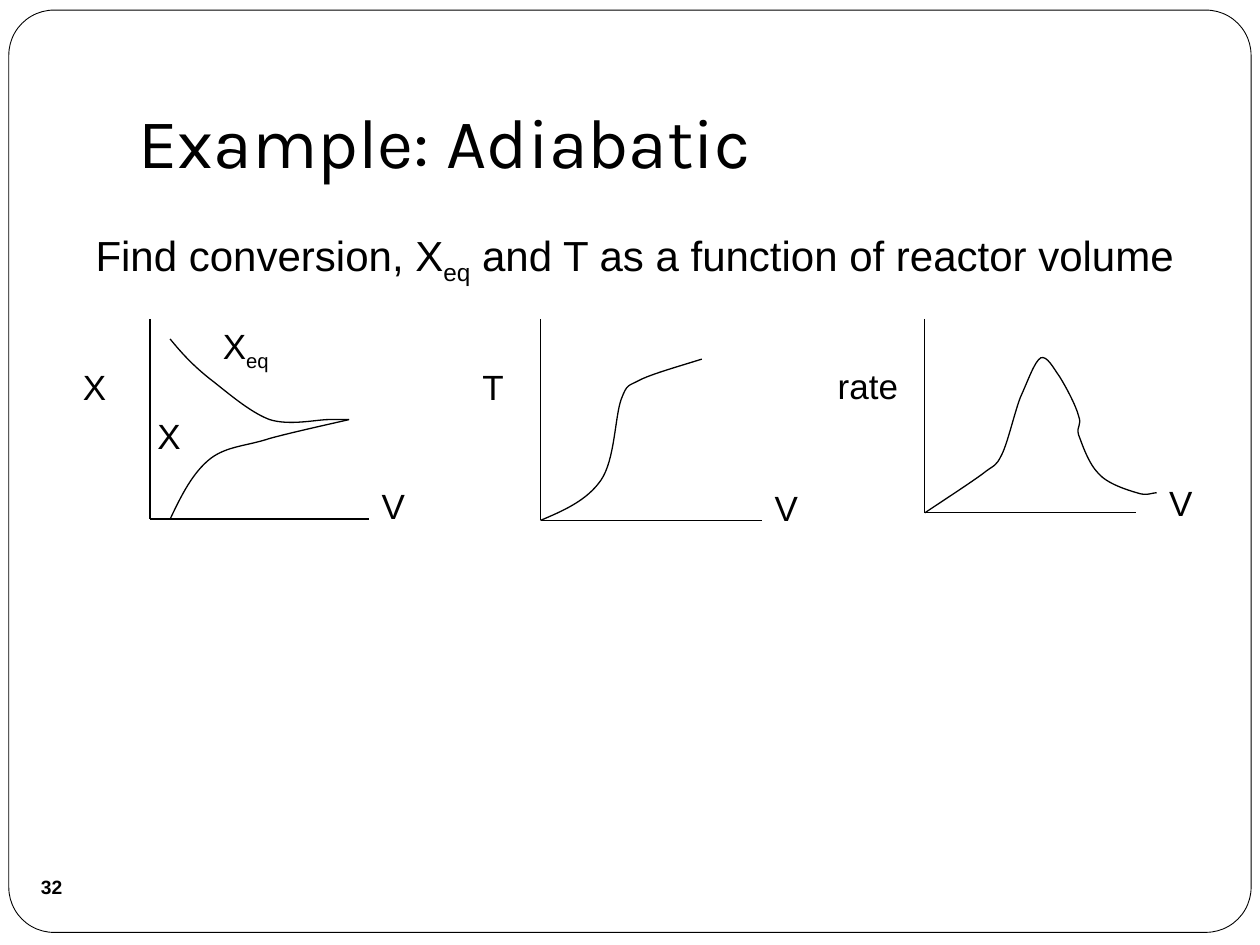
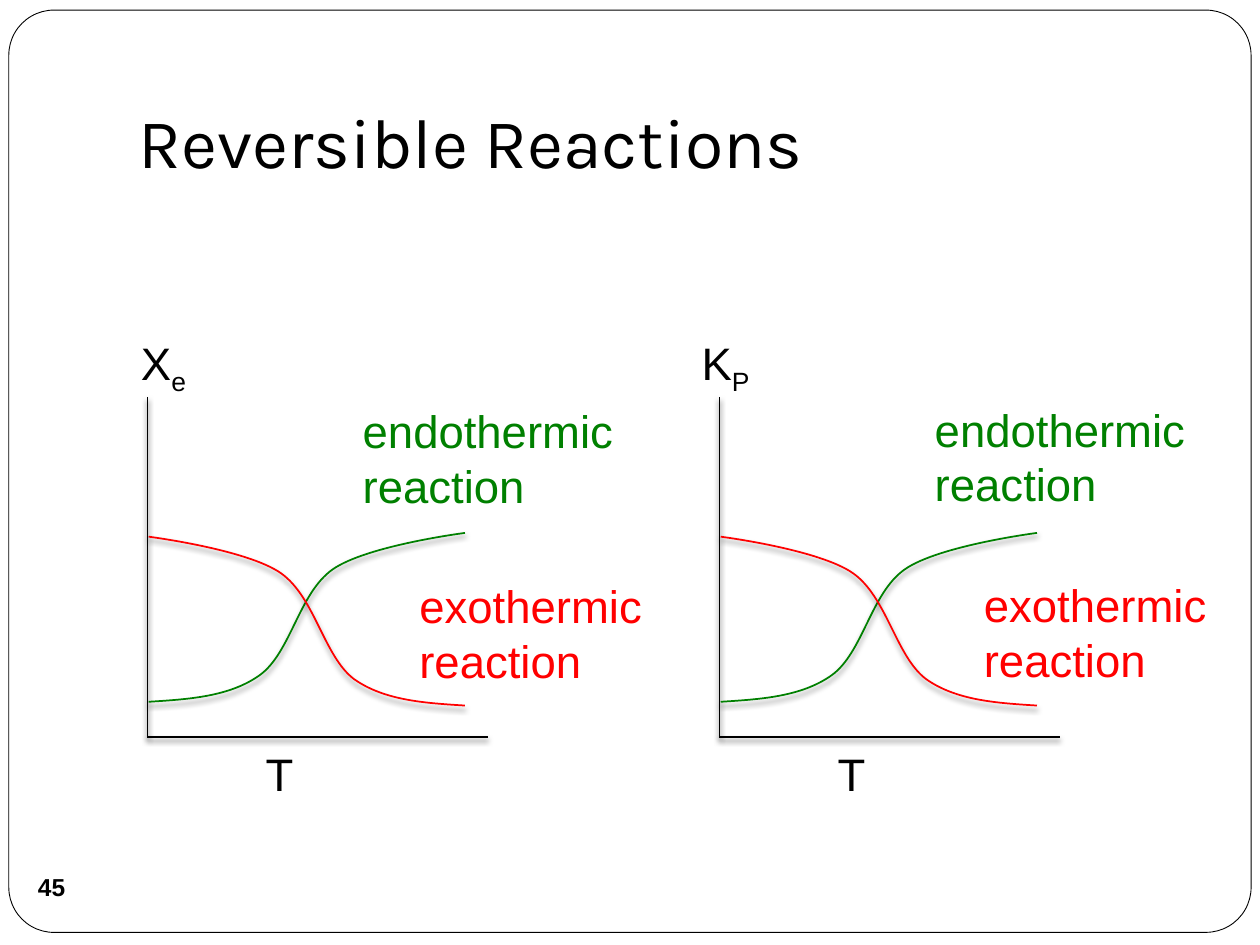
from dataclasses import dataclass

from lxml.etree import SubElement
from pptx import Presentation
from pptx.dml.color import RGBColor
from pptx.enum.shapes import MSO_CONNECTOR, MSO_SHAPE
from pptx.enum.text import MSO_ANCHOR, PP_ALIGN
from pptx.oxml.ns import qn
from pptx.util import Inches, Pt

BLACK = RGBColor(0x00, 0x00, 0x00)
WHITE = RGBColor(0xFF, 0xFF, 0xFF)
GREEN = RGBColor(0x00, 0x80, 0x00)
RED = RGBColor(0xFF, 0x00, 0x00)

BODY_FONT = "Arial"
TITLE_FONT = "Karla"

Point = tuple[float, float]


@dataclass(frozen=True)
class Label:
    text: str  # parts between underscores are subscripts
    left: float
    top: float
    width: float
    height: float
    color: RGBColor = BLACK


@dataclass(frozen=True)
class Curve:
    """A start point followed by three points for each cubic segment."""
    points: tuple[Point, ...]
    color: RGBColor = BLACK


@dataclass(frozen=True)
class Graph:
    left: float
    top: float
    right: float
    bottom: float
    labels: tuple[Label, ...]
    curves: tuple[Curve, ...]
    curve_offset: float = 0


# Adiabatic profiles along the reactor volume
PROFILE_GRAPHS = (
    Graph(1.19, 2.53, 2.93, 4.12, (
        Label("V", 2.93, 3.8, 0.79, 0.44),
        Label("X", 0.56, 2.85, 0.79, 0.44),
        Label("X", 1.15, 3.24, 0.79, 0.44),
        Label("X_eq_", 1.67, 2.53, 1.27, 0.44),
    ), (
        Curve(((1.35, 4.12), (1.44, 3.93), (1.53, 3.75), (1.67, 3.64),
               (1.8, 3.54), (1.96, 3.54), (2.14, 3.48),
               (2.32, 3.43), (2.69, 3.35), (2.77, 3.33))),
        Curve(((1.35, 2.69), (1.44, 2.8), (1.53, 2.9), (1.67, 3.01),
               (1.8, 3.11), (1.98, 3.27), (2.14, 3.33),
               (2.3, 3.38), (2.51, 3.33), (2.61, 3.33),
               (2.72, 3.33), (2.75, 3.33), (2.77, 3.33))),
    )),
    Graph(4.29, 2.53, 6.05, 4.13, (
        Label("V", 6.05, 3.81, 0.8, 0.44),
        Label("T", 3.73, 2.85, 0.8, 0.44),
    ), (
        Curve(((4.29, 4.13), (4.48, 4.05), (4.66, 3.97), (4.77, 3.81),
               (4.88, 3.65), (4.88, 3.31), (4.93, 3.17),
               (4.98, 3.04), (4.98, 3.07), (5.09, 3.01),
               (5.2, 2.96), (5.38, 2.91), (5.57, 2.85))),
    )),
    Graph(7.34, 2.53, 9.02, 4.07, (
        Label("V", 9.18, 3.77, 0.77, 0.44),
        Label("rate", 6.55, 2.84, 1.23, 0.44),
    ), (
        Curve(((7.34, 4.07), (7.52, 3.95), (7.69, 3.84), (7.8, 3.76),
               (7.9, 3.68), (7.9, 3.71), (7.95, 3.61),
               (8, 3.51), (8.05, 3.28), (8.1, 3.15),
               (8.16, 3.02), (8.21, 2.87), (8.26, 2.84),
               (8.31, 2.82), (8.36, 2.92), (8.41, 2.99),
               (8.46, 3.07), (8.54, 3.22), (8.56, 3.3),
               (8.59, 3.38), (8.54, 3.38), (8.56, 3.45),
               (8.59, 3.53), (8.64, 3.68), (8.72, 3.76),
               (8.79, 3.84), (8.95, 3.89), (9.02, 3.91),
               (9.1, 3.94), (9.15, 3.91), (9.18, 3.91))),
    )),
)

# Equilibrium curves, measured from the vertical axis of their graph
ENDOTHERMIC = Curve((
    (0, 5.57), (0.32, 5.55), (0.64, 5.53), (0.88, 5.36),
    (1.13, 5.18), (1.19, 4.71), (1.46, 4.52),
    (1.73, 4.33), (2.51, 4.23), (2.51, 4.23)), GREEN)
EXOTHERMIC = Curve((
    (2.51, 5.6), (2.19, 5.58), (1.87, 5.56), (1.63, 5.39),
    (1.39, 5.21), (1.32, 4.74), (1.05, 4.55),
    (0.78, 4.36), (0, 4.26), (0, 4.26)), RED)


def equilibrium_graph(left: float, quantity: Label, endothermic: Label,
                      exothermic: Label) -> Graph:
    temperature = Label("T", left + 0.84, 5.87, 0.77, 0.54)
    return Graph(left, 3.15, left + 2.7, 5.85,
                 (quantity, endothermic, exothermic, temperature),
                 (ENDOTHERMIC, EXOTHERMIC), curve_offset=left + 0.01)


EQUILIBRIUM_GRAPHS = (
    equilibrium_graph(
        1.17, Label("X_e_", 1.02, 2.61, 0.77, 0.54),
        Label("endothermic reaction", 2.78, 3.15, 2.92, 0.98, GREEN),
        Label("exothermic reaction", 3.23, 4.54, 2.47, 0.98, RED)),
    equilibrium_graph(
        5.71, Label("K_P_", 5.47, 2.61, 0.77, 0.54),
        Label("endothermic reaction", 7.32, 3.14, 2.92, 0.98, GREEN),
        Label("exothermic reaction", 7.71, 4.53, 2.31, 0.98, RED)),
)


def write_text(frame, text: str, *, size: float, color: RGBColor = BLACK,
               font: str = BODY_FONT, bold: bool = False,
               align: PP_ALIGN = PP_ALIGN.LEFT,
               anchor: MSO_ANCHOR = MSO_ANCHOR.TOP,
               margins: tuple[float, ...] = (0.1, 0.05, 0.1, 0.05),
               wrap: bool = True) -> None:
    frame.word_wrap = wrap
    frame.vertical_anchor = anchor
    (frame.margin_left, frame.margin_top,
     frame.margin_right, frame.margin_bottom) = map(Inches, margins)
    paragraph = frame.paragraphs[0]
    paragraph.alignment = align
    for index, part in enumerate(text.split("_")):
        if not part:
            continue
        run = paragraph.add_run()
        run.text = part
        run.font.name = font
        run.font.size = Pt(size)
        run.font.bold = bold
        run.font.color.rgb = color
        if index % 2:
            run.font._element.set("baseline", "-25000")


def add_label(slide, label: Label, size: float) -> None:
    box = slide.shapes.add_textbox(Inches(label.left), Inches(label.top),
                                   Inches(label.width), Inches(label.height))
    write_text(box.text_frame, label.text, size=size, color=label.color)


def style_stroke(stroke, color: RGBColor, width: float, shadow: bool) -> None:
    stroke.line.color.rgb = color
    stroke.line.width = Pt(width)
    effects = SubElement(stroke._element.spPr, qn("a:effectLst"))
    if shadow:
        outer = SubElement(effects, qn("a:outerShdw"), blurRad=str(Pt(3)),
                           dist=str(Pt(2)), dir="5400000", rotWithShape="0")
        shade = SubElement(outer, qn("a:srgbClr"), val=str(BLACK))
        SubElement(shade, qn("a:alpha"), val="50000")


def add_curve(slide, curve: Curve, offset: float):
    start, *rest = [(Inches(x + offset), Inches(y)) for x, y in curve.points]
    builder = slide.shapes.build_freeform(*start)
    builder.add_line_segments(rest, close=False)
    trace = builder.convert_to_shape()
    trace.fill.background()
    # Join every three straight pieces into one cubic segment
    pieces = list(trace._element.iter(qn("a:lnTo")))
    for first in range(0, len(pieces), 3):
        cubic = SubElement(pieces[first].getparent(), qn("a:cubicBezTo"))
        for piece in pieces[first:first + 3]:
            cubic.append(piece[0])
            piece.getparent().remove(piece)
    return trace


def add_graph(slide, graph: Graph, *, text_size: float, line_width: float,
              shadow: bool = False) -> None:
    # Axes
    origin = (graph.left, graph.bottom)
    for start, end in (((graph.left, graph.top), origin),
                       (origin, (graph.right, graph.bottom))):
        axis = slide.shapes.add_connector(
            MSO_CONNECTOR.STRAIGHT, *map(Inches, start + end))
        style_stroke(axis, BLACK, line_width, shadow)
    # Curves
    for curve in graph.curves:
        trace = add_curve(slide, curve, graph.curve_offset)
        style_stroke(trace, curve.color, line_width, shadow)
    # Labels
    for label in graph.labels:
        add_label(slide, label, text_size)


def add_titled_slide(prs, title: str, number: str, number_size: float):
    slide = prs.slides.add_slide(prs.slide_layouts[5])
    # Rounded frame behind everything
    border = slide.shapes.add_shape(MSO_SHAPE.ROUNDED_RECTANGLE, Inches(0.07),
                                    Inches(0.08), Inches(9.86), Inches(7.32))
    border.adjustments[0] = 0.049
    border.shadow.inherit = False
    border.fill.solid()
    border.fill.fore_color.rgb = WHITE
    border.line.color.rgb = BLACK
    border.line.width = Pt(0.5)
    slide.shapes._spTree.insert(2, border._element)
    # Title
    heading = slide.shapes.title
    heading.left, heading.top = Inches(1), Inches(0.3)
    heading.width, heading.height = Inches(8.5), Inches(1.25)
    write_text(heading.text_frame, title, size=40, font=TITLE_FONT,
               anchor=MSO_ANCHOR.BOTTOM, margins=(0.1, 0.05, 0.1, 0.1))
    # Slide number
    badge = slide.shapes.add_shape(MSO_SHAPE.OVAL, Inches(0.16), Inches(6.79),
                                   Inches(0.5), Inches(0.5))
    badge.shadow.inherit = False
    badge.fill.background()
    badge.line.fill.background()
    write_text(badge.text_frame, number, size=number_size, bold=True,
               align=PP_ALIGN.CENTER, anchor=MSO_ANCHOR.MIDDLE,
               margins=(0, 0, 0, 0), wrap=False)
    return slide


def main() -> None:
    prs = Presentation()
    prs.slide_width, prs.slide_height = Inches(10), Inches(7.5)

    adiabatic = add_titled_slide(prs, "Example: Adiabatic", "32", 11)
    task = "Find conversion, X_eq_ and T as a function of reactor volume"
    add_label(adiabatic, Label(task, 0.66, 1.77, 10.09, 0.5), 24)
    for graph in PROFILE_GRAPHS:
        add_graph(adiabatic, graph, text_size=20, line_width=0.75)

    reversible = add_titled_slide(prs, "Reversible Reactions", "45", 14)
    for graph in EQUILIBRIUM_GRAPHS:
        add_graph(reversible, graph, text_size=26, line_width=1, shadow=True)

    prs.save("out.pptx")


if __name__ == "__main__":
    main()
